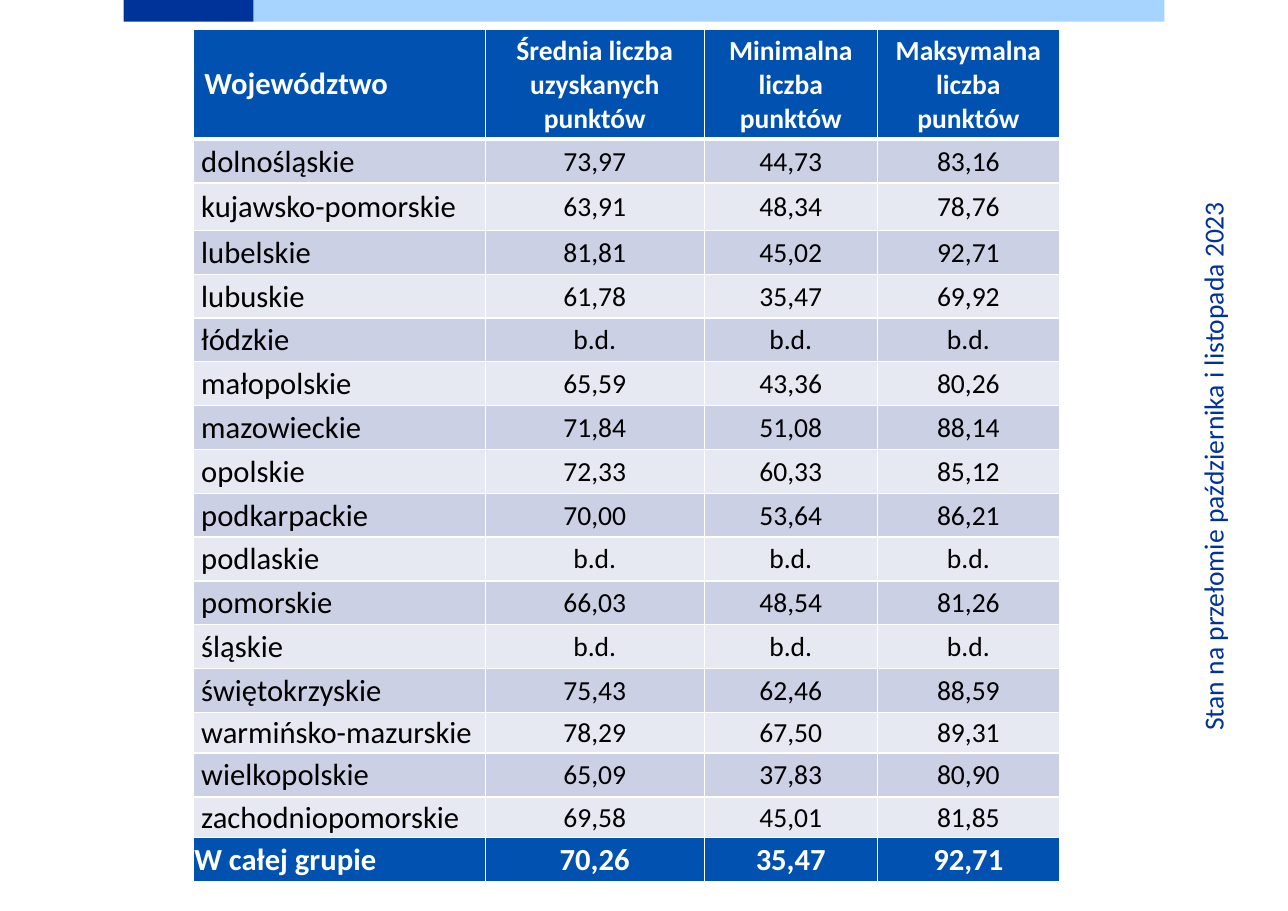
from lxml.etree import SubElement
from pptx import Presentation
from pptx.dml.color import RGBColor
from pptx.enum.shapes import MSO_SHAPE
from pptx.enum.text import MSO_ANCHOR, PP_ALIGN
from pptx.oxml.ns import qn
from pptx.util import Cm, Pt

HEAD = ["Województwo", "Średnia liczba uzyskanych punktów",
        "Minimalna liczba punktów", "Maksymalna liczba punktów"]
SCORES = [
    ["dolnośląskie", "73,97", "44,73", "83,16"],
    ["kujawsko-pomorskie", "63,91", "48,34", "78,76"],
    ["lubelskie", "81,81", "45,02", "92,71"],
    ["lubuskie", "61,78", "35,47", "69,92"],
    ["łódzkie", "b.d.", "b.d.", "b.d."],
    ["małopolskie", "65,59", "43,36", "80,26"],
    ["mazowieckie", "71,84", "51,08", "88,14"],
    ["opolskie", "72,33", "60,33", "85,12"],
    ["podkarpackie", "70,00", "53,64", "86,21"],
    ["podlaskie", "b.d.", "b.d.", "b.d."],
    ["pomorskie", "66,03", "48,54", "81,26"],
    ["śląskie", "b.d.", "b.d.", "b.d."],
    ["świętokrzyskie", "75,43", "62,46", "88,59"],
    ["warmińsko-mazurskie", "78,29", "67,50", "89,31"],
    ["wielkopolskie", "65,09", "37,83", "80,90"],
    ["zachodniopomorskie", "69,58", "45,01", "81,85"],
]
TOTAL = ["W całej grupie", "70,26", "35,47", "92,71"]
WIDTHS = [6.73, 5.05, 3.99, 4.2]
ROW = 1.01
ODD_ROWS = {0: 2.41, 2: 1.09, 14: 0.94, 16: 0.94}


def color(code):
    return RGBColor.from_string(code)


class Page:
    font = "Calibri"
    navy, sky, blue = "003399", "A6D3FF", "0051B0"
    bands = ["E7E9F2", "CCD0E4"]
    white, black = "FFFFFF", "000000"

    def __init__(self, slide):
        self.slide = slide

    def put(self, frame, text, size, ink, bold=False, align=PP_ALIGN.LEFT):
        """Fill a text frame with one styled paragraph."""
        frame.text = text
        frame.word_wrap = True
        line = frame.paragraphs[0]
        line.alignment = align
        font = line.runs[0].font
        font.name, font.size, font.bold = self.font, Pt(size), bold
        font.color.rgb = color(ink)

    def bar(self, left, top, width, height, fill):
        shape = self.slide.shapes.add_shape(
            MSO_SHAPE.RECTANGLE, Cm(left), Cm(top), Cm(width), Cm(height))
        shape.shadow.inherit = False
        shape.fill.solid()
        shape.fill.fore_color.rgb = color(fill)
        shape.line.fill.background()

    def label(self, left, top, width, height, text, size, turn):
        box = self.slide.shapes.add_textbox(
            Cm(left), Cm(top), Cm(width), Cm(height))
        box.rotation = turn
        self.put(box.text_frame, text, size, self.navy)

    def edge(self, cell, side, points):
        props = cell._tc.get_or_add_tcPr()
        line = SubElement(props, qn(f"a:ln{side}"), w=str(Pt(points)))
        fill = SubElement(line, qn("a:solidFill"))
        SubElement(fill, qn("a:srgbClr"), val=self.white)

    def cell(self, cell, text, row, col, last):
        head, total = row == 0, row == last
        strong = head or total
        thick = {(0, "B"): 3, (1, "T"): 3}
        for side in "LRTB":
            self.edge(cell, side, thick.get((row, side), 1))
        cell.fill.solid()
        cell.fill.fore_color.rgb = color(
            self.blue if strong else self.bands[row % 2])
        cell.vertical_anchor = MSO_ANCHOR.MIDDLE
        if not head:
            cell.margin_left = cell.margin_right = cell.margin_top = Cm(0.02)
            cell.margin_bottom = 0
            if col == 0 and not total:
                cell.margin_left = Cm(0.18)
        self.put(cell.text_frame, text,
                 20 if col == 0 or total else 18,
                 self.white if strong else self.black, strong,
                 PP_ALIGN.CENTER if col else PP_ALIGN.LEFT)

    def table(self, left, top, rows, widths, heights):
        frame = self.slide.shapes.add_table(
            len(rows), len(widths), Cm(left), Cm(top),
            Cm(sum(widths)), Cm(sum(heights)))
        grid = frame.table
        for col, width in zip(grid.columns, widths):
            col.width = Cm(width)
        for r, (row, height) in enumerate(zip(rows, heights)):
            grid.rows[r].height = Cm(height)
            for c, text in enumerate(row):
                self.cell(grid.cell(r, c), text, r, c, len(rows) - 1)


def main():
    deck = Presentation()
    deck.slide_width, deck.slide_height = Cm(29.7), Cm(21)
    page = Page(deck.slides.add_slide(deck.slide_layouts[6]))
    page.bar(2.85, 0, 3, 0.5, page.navy)
    page.bar(5.85, 0, 21, 0.5, page.sky)
    page.label(21.36, 9.98, 13.21, 1.02,
               "Stan na przełomie października i listopada 2023", 18, 270)
    rows = [HEAD, *SCORES, TOTAL]
    heights = [ODD_ROWS.get(r, ROW) for r in range(len(rows))]
    page.table(4.46, 0.67, rows, WIDTHS, heights)
    deck.save("out.pptx")


if __name__ == "__main__":
    main()
